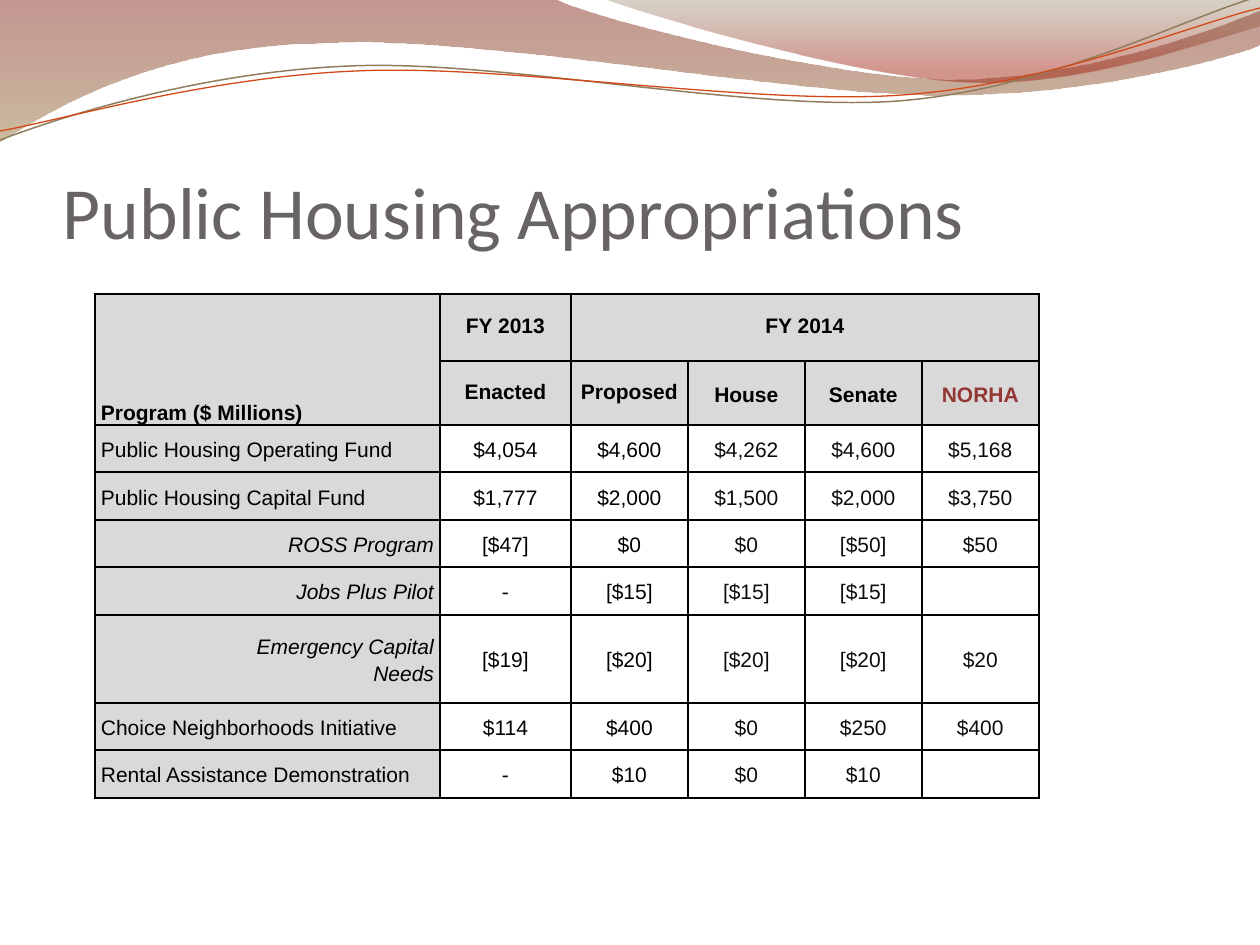
import dataclasses

import pptx
import pptx.dml.color
import pptx.enum.text
import pptx.oxml
import pptx.oxml.ns
import pptx.util

PX = 914400 // 126
ALIGN = pptx.enum.text.PP_ALIGN
ANCHOR = pptx.enum.text.MSO_ANCHOR
NS = pptx.oxml.ns.nsdecls("a")
qn = pptx.oxml.ns.qn


@dataclasses.dataclass(frozen=True)
class Theme:
    title: str = "696464"
    ink: str = "000000"
    soft: str = "0D0D0D"
    mark: str = "943634"
    shade: str = "D9D9D9"
    tan: str = "8F7D5E"
    red: str = "D34817"
    head_font: str = "Calibri"
    body_font: str = "Arial"
    head_size: int = 42
    body_size: int = 12


THEME = Theme()

# Each step is one point (straight) or three points (Bezier curve).
LEFT_WAVE = [
    [(0, 0)], [(554, -1)],
    [(600, 21), (837, 79), (955, 79)],
    [(1075, 79), (1207, 33), (1260, 11)],
    [(1261, 45)],
    [(1239, 55), (1096, 96), (940, 95)],
    [(784, 95), (481, 35), (324, 43)],
    [(163, 45), (58, 105), (-1, 142)],
    [(0, 0)],
]
RIGHT_WAVE = [
    [(604, -1)],
    [(641, 14), (859, 78), (969, 82)],
    [(1079, 87), (1211, 40), (1260, 26)],
    [(1260, 0)], [(604, -1)],
]
TAN_LINE = [
    [(0, 140)],
    [(60, 117), (199, 72), (349, 66)],
    [(498, 59), (747, 112), (898, 101)],
    [(1050, 89), (1182, 19), (1257, -3)],
]
RED_LINE = [
    [(0, 131)],
    [(59, 121), (207, 77), (357, 71)],
    [(508, 64), (752, 106), (903, 95)],
    [(1053, 84), (1186, 26), (1260, 8)],
]

COLS = [345, 131] + [117] * 4
ROWS = [67, 64, 47, 48, 47, 48, 88, 47, 48]
HEADS = 2
DATA = [
    ["", "FY 2013", "FY 2014", "", "", ""],
    ["Program ($ Millions)", "Enacted", "Proposed", "House", "Senate", "NORHA"],
    ["Public Housing Operating Fund", "$4,054", "$4,600", "$4,262", "$4,600", "$5,168"],
    ["Public Housing Capital Fund", "$1,777", "$2,000", "$1,500", "$2,000", "$3,750"],
    ["ROSS Program", "[$47]", "$0", "$0", "[$50]", "$50"],
    ["Jobs Plus Pilot", "-", "[$15]", "[$15]", "[$15]", ""],
    ["Emergency Capital Needs", "[$19]", "[$20]", "[$20]", "[$20]", "$20"],
    ["Choice Neighborhoods Initiative", "$114", "$400", "$0", "$250", "$400"],
    ["Rental Assistance Demonstration", "-", "$10", "$0", "$10", ""],
]
SUB_ROWS = range(4, 7)
WRAP_ROW = 6


def rgb(code):
    return pptx.dml.color.RGBColor.from_string(code)


def add_path(slide, steps, close=False):
    """Build a freeform through all points, then join each triple into a curve."""
    points = [point for step in steps for point in step]
    pen = slide.shapes.build_freeform(*points[0], scale=PX)
    pen.add_line_segments(points[1:], close=close)
    shape = pen.convert_to_shape()
    shape.shadow.inherit = False
    legs = shape.element.spPr.iter(qn("a:lnTo"))
    legs = iter(list(legs))
    for step in steps[1:]:
        group = [next(legs) for _ in step]
        if len(group) == 3:
            curve = pptx.oxml.parse_xml(f"<a:cubicBezTo {NS}/>")
            group[0].addprevious(curve)
            for leg in group:
                curve.append(leg[0])
                leg.getparent().remove(leg)
    return shape


def add_wave(slide, steps, stops):
    """Draw a filled wave; each stop is place, colour and opacity percent."""
    shape = add_path(slide, steps, True)
    shape.line.fill.background()
    shape.fill.gradient()
    shape.fill.gradient_angle = 270
    for stop, (place, code, _) in zip(shape.fill.gradient_stops, stops):
        stop.position = place
        stop.color.rgb = rgb(code)
    tints = shape.element.spPr.iter(qn("a:srgbClr"))
    for tint, (_, _, alpha) in zip(tints, stops):
        tint.append(pptx.oxml.parse_xml(f'<a:alpha {NS} val="{alpha * 1000}"/>'))


def add_line(slide, steps, code, width):
    shape = add_path(slide, steps)
    shape.fill.background()
    shape.line.color.rgb = rgb(code)
    shape.line.width = pptx.util.Pt(width)


def style(para, font, size, code, bold=False, italic=False):
    for run in para.runs:
        run.font.name = font
        run.font.size = pptx.util.Pt(size)
        run.font.color.rgb = rgb(code)
        run.font.bold = bold
        run.font.italic = italic


def add_title(slide, text):
    box = slide.shapes.add_textbox(63 * PX, 97 * PX, 1134 * PX, 157 * PX)
    frame = box.text_frame
    frame.word_wrap = True
    frame.vertical_anchor = ANCHOR.BOTTOM
    frame.margin_left = frame.margin_right = frame.margin_bottom = 0
    frame.margin_top = 6 * PX
    frame.text = text
    style(frame.paragraphs[0], THEME.head_font, THEME.head_size, THEME.title)


def set_edges(cell, hidden):
    """Rule the four sides of a cell, except the hidden one."""
    props = cell._tc.get_or_add_tcPr()
    for side in "LRTB":
        fill = "<a:noFill/>"
        if side != hidden:
            fill = f'<a:solidFill><a:srgbClr val="{THEME.ink}"/></a:solidFill>'
        props.append(pptx.oxml.parse_xml(f'<a:ln{side} {NS} w="12700">{fill}</a:ln{side}>'))


def fill_cell(cell, row, col):
    head = row < HEADS
    label = col == 0
    sub = label and row in SUB_ROWS
    set_edges(cell, {0: "B", 1: "T"}.get(row) if label else None)
    if head or label:
        cell.fill.solid()
        cell.fill.fore_color.rgb = rgb(THEME.shade)
    else:
        cell.fill.background()
    cell.margin_left = cell.margin_right = 6 * PX
    cell.margin_top = cell.margin_bottom = 0
    cell.vertical_anchor = ANCHOR.BOTTOM if head and label else ANCHOR.MIDDLE

    cell.text_frame.text = DATA[row][col]
    para = cell.text_frame.paragraphs[0]
    para.alignment = ALIGN.RIGHT if sub else ALIGN.LEFT if label else ALIGN.CENTER
    if label and row == WRAP_ROW:
        para._p.get_or_add_pPr().set("marL", str(120 * PX))
    tight = head and not label and (row == 0 or col < 3)
    para.line_spacing = pptx.util.Pt(12) if tight else 1.15
    if label or not head:
        para.space_before = para.space_after = pptx.util.Pt(2.4)
    code = THEME.soft if col > 2 and not head else THEME.ink
    if row == 1 and col == len(COLS) - 1:
        code = THEME.mark
    style(para, THEME.body_font, THEME.body_size, code, head, sub)


def add_grid(slide):
    frame = slide.shapes.add_table(
        len(ROWS), len(COLS), 95 * PX, 294 * PX, sum(COLS) * PX, sum(ROWS) * PX)
    table = frame.table
    table.first_row = table.horz_banding = False
    for col, width in zip(table.columns, COLS):
        col.width = width * PX
    for row, height in zip(table.rows, ROWS):
        row.height = height * PX
    for row in range(len(ROWS)):
        for col in range(len(COLS)):
            fill_cell(table.cell(row, col), row, col)
    table.cell(0, 2).merge(table.cell(0, len(COLS) - 1))


def main():
    deck = pptx.Presentation()
    deck.slide_width, deck.slide_height = 1260 * PX, 945 * PX
    slide = deck.slides.add_slide(deck.slide_layouts[6])
    add_wave(slide, LEFT_WAVE, [(0, "7C1A0E", 45), (1, "A18552", 55)])
    add_wave(slide, RIGHT_WAVE, [(0, "7E6B48", 30), (0.8, "9F1705", 45)])
    add_line(slide, TAN_LINE, THEME.tan, 0.85)
    add_line(slide, RED_LINE, THEME.red, 0.75)
    add_title(slide, "Public Housing Appropriations")
    add_grid(slide)
    deck.save("out.pptx")


if __name__ == "__main__":
    main()
